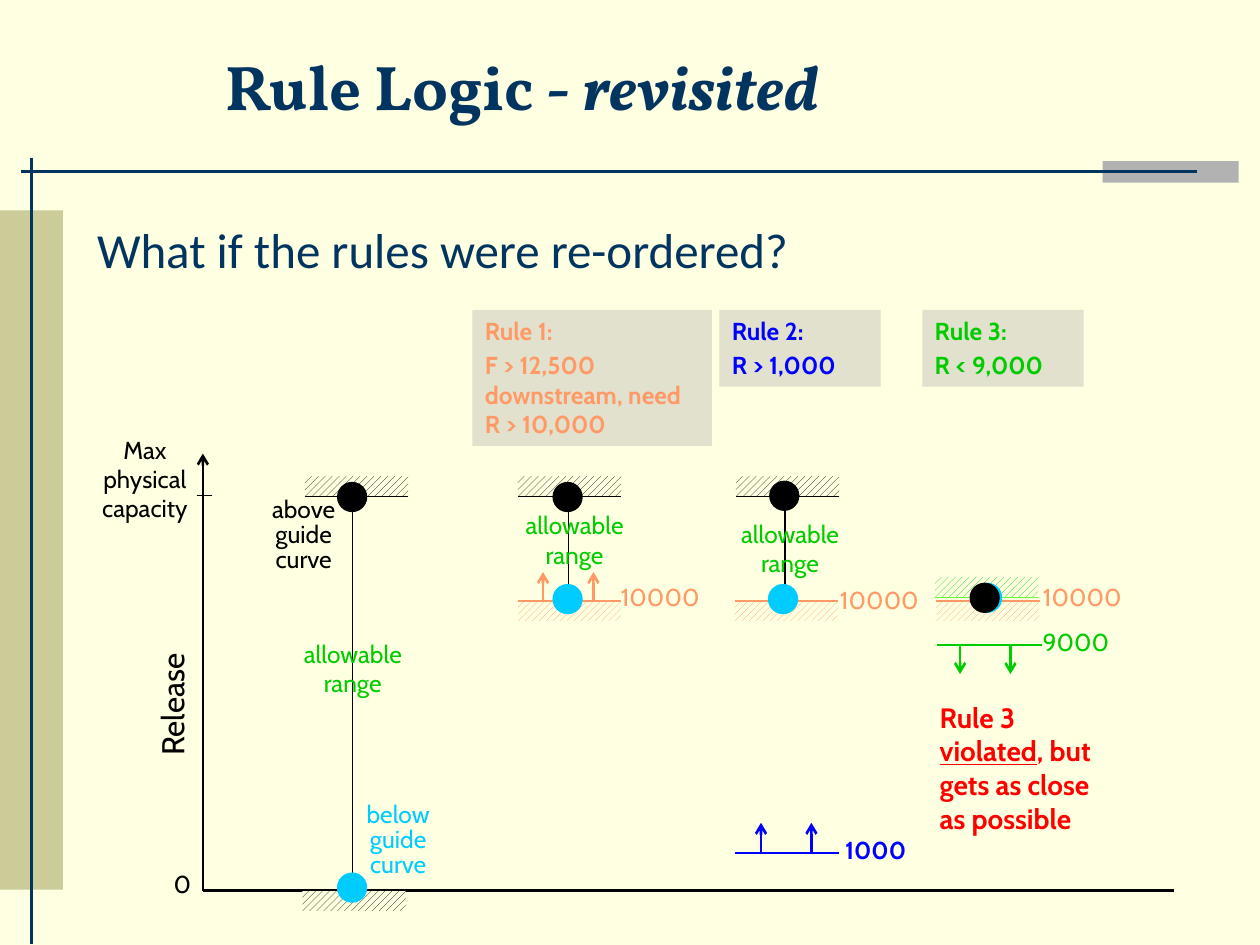
from dataclasses import dataclass

from lxml import etree
from pptx import Presentation
from pptx.dml.color import RGBColor
from pptx.enum.dml import MSO_PATTERN
from pptx.enum.shapes import MSO_CONNECTOR, MSO_SHAPE
from pptx.enum.text import MSO_ANCHOR, MSO_AUTO_SIZE, PP_ALIGN
from pptx.oxml.ns import qn
from pptx.util import Inches, Pt

RECTANGLE, OVAL = MSO_SHAPE.RECTANGLE, MSO_SHAPE.OVAL
STRAIGHT = MSO_CONNECTOR.STRAIGHT
DIAGONAL = MSO_PATTERN.WIDE_UPWARD_DIAGONAL
LEFT, CENTER = PP_ALIGN.LEFT, PP_ALIGN.CENTER
TOP, MIDDLE = MSO_ANCHOR.TOP, MSO_ANCHOR.MIDDLE
GROW, FIXED = MSO_AUTO_SIZE.SHAPE_TO_FIT_TEXT, MSO_AUTO_SIZE.NONE


@dataclass(frozen=True)
class Theme:
    paper: str = "FFFFE1"
    navy: str = "01345F"
    gray: str = "B2B2B2"
    khaki: str = "CCCC99"
    black: str = "000000"
    orange: str = "FF9966"
    green: str = "00CC00"
    lime: str = "66FF33"
    blue: str = "0000FF"
    cyan: str = "00CCFF"
    red: str = "FF0000"
    title_font: str = "Vollkorn"
    body_font: str = "Calibri"
    label_font: str = "Cabin"
    title_size: int = 36
    body_size: int = 28
    axis_size: int = 18
    verdict_size: int = 16
    label_size: int = 14
    thin: float = 0.75
    thick: float = 1.5


THEME = Theme()


@dataclass(frozen=True)
class Rule:
    left: float
    width: float
    height: float
    color: str
    heading: str
    condition: str


@dataclass(frozen=True)
class Limit:
    left: float
    level: float
    color: str
    line_color: str
    hatch_above: bool


@dataclass(frozen=True)
class Dot:
    x: float
    y: float
    color: str


@dataclass(frozen=True)
class Label:
    left: float
    top: float
    width: float
    height: float
    text: str
    color: str
    bold: bool = False
    spacing: float = 1.0


RULES = (
    Rule(3.75, 1.9, 1.08, THEME.orange, "Rule 1:", "F > 12,500 downstream, need R > 10,000"),
    Rule(7.32, 1.28, 0.61, THEME.green, "Rule 3:", "R < 9,000"),
    Rule(5.71, 1.28, 0.61, THEME.blue, "Rule 2:", "R > 1,000"),
)
LIMITS = (
    *(Limit(left, 3.94, THEME.black, THEME.black, True) for left in (2.42, 4.11, 5.84)),
    Limit(2.4, 7.07, THEME.black, THEME.black, False),
    *(Limit(left, 4.77, THEME.orange, THEME.orange, False) for left in (4.11, 5.83, 7.43)),
    Limit(7.42, 4.74, THEME.green, THEME.lime, True),
)
RANGES = ((2.8, 3.93, 7.05), (4.51, 3.86, 4.86), (6.23, 3.82, 4.83))
DOTS = (
    Dot(2.8, 3.95, THEME.black), Dot(2.8, 7.05, THEME.cyan),
    Dot(4.51, 4.76, THEME.cyan), Dot(4.51, 3.95, THEME.black),
    Dot(6.22, 4.76, THEME.cyan), Dot(6.23, 3.94, THEME.black),
    Dot(7.84, 4.75, THEME.cyan), Dot(7.82, 4.75, THEME.black),
)
ARROW_PAIRS = (
    (4.31, 4.78, -0.24, THEME.orange),
    (6.04, 6.77, -0.24, THEME.blue),
    (7.62, 5.11, 0.24, THEME.green),
)
BOUNDS = ((5.83, 6.77, THEME.blue), (7.44, 5.12, THEME.green))
LABELS = (
    Label(0.68, 3.4, 0.94, 0.8, "Max physical capacity", THEME.black),
    Label(1.28, 6.85, 0.29, 0.33, "0", THEME.black),
    Label(1.97, 3.91, 0.88, 0.69, "above guide curve", THEME.black, spacing=0.85),
    Label(2.72, 6.33, 0.88, 0.69, "below guide curve", THEME.cyan, spacing=0.85),
    *(Label(left, top, 1.18, 0.57, "allowable range", THEME.green)
      for left, top in ((2.21, 5.02), (3.97, 4), (5.68, 4.07))),
    *(Label(left, top, 0.94, 0.33, "10000", THEME.orange)
      for left, top in ((4.77, 4.57), (6.51, 4.59), (8.12, 4.57))),
    Label(6.48, 6.58, 0.94, 0.33, "1000", THEME.blue, bold=True),
    Label(8.07, 4.93, 0.94, 0.33, "9000", THEME.green),
)


def rgb(color: str) -> RGBColor:
    """Turn a hex colour into an RGBColor."""
    return RGBColor.from_string(color)


def write(paragraph, text: str, *, color: str, size: int = THEME.label_size,
          font: str = THEME.label_font, bold: bool = False, italic: bool = False,
          underline: bool = False, align=LEFT, spacing: float = 1.0, before: float = 0) -> None:
    """Add a formatted run to a paragraph."""
    paragraph.alignment = align
    paragraph.line_spacing = spacing
    paragraph.space_before = Pt(before)
    run = paragraph.add_run()
    run.text = text
    style = run.font
    style.name, style.size, style.color.rgb = font, Pt(size), rgb(color)
    style.bold, style.italic, style.underline = bold, italic, underline


def add_block(slide, kind, left: float, top: float, width: float, height: float,
              color: str, *, hatched: bool = False, outlined: bool = False):
    """Draw a preset shape with a plain or hatched fill."""
    block = slide.shapes.add_shape(kind, Inches(left), Inches(top), Inches(width), Inches(height))
    block.shadow.inherit = False
    if hatched:
        block.fill.patterned()
        block.fill.pattern = DIAGONAL
        block.fill.fore_color.rgb, block.fill.back_color.rgb = rgb(color), rgb(THEME.paper)
    else:
        block.fill.solid()
        block.fill.fore_color.rgb = rgb(color)
    if outlined:
        block.line.color.rgb, block.line.width = rgb(color), Pt(THEME.thin)
    else:
        block.line.fill.background()
    return block


def add_line(slide, x1: float, y1: float, x2: float, y2: float, color: str,
             width: float = THEME.thin, arrow: bool = False) -> None:
    """Draw a straight line, with an arrowhead at its end if asked."""
    line = slide.shapes.add_connector(STRAIGHT, Inches(x1), Inches(y1), Inches(x2), Inches(y2))
    line.line.color.rgb, line.line.width = rgb(color), Pt(width)
    if arrow:
        etree.SubElement(line.line._get_or_add_ln(), qn("a:tailEnd"), type="arrow")
    etree.SubElement(line._element.spPr, qn("a:effectLst"))


def add_text_box(slide, left: float, top: float, width: float, height: float):
    """Add an empty wrapping text box."""
    box = slide.shapes.add_textbox(Inches(left), Inches(top), Inches(width), Inches(height))
    box.text_frame.word_wrap = True
    box.text_frame.auto_size = GROW
    return box


def add_rule(slide, rule: Rule) -> None:
    """Draw a translucent panel stating one rule."""
    panel = add_block(slide, RECTANGLE, rule.left, 2.46, rule.width, rule.height, THEME.gray)
    tint = panel._element.spPr.find(qn("a:solidFill"))[0]
    etree.SubElement(tint, qn("a:alpha"), val="39000")
    frame = panel.text_frame
    frame.word_wrap, frame.auto_size, frame.vertical_anchor = True, GROW, TOP
    write(frame.paragraphs[0], rule.heading, color=rule.color, bold=True)
    write(frame.add_paragraph(), rule.condition, color=rule.color, bold=True, before=2.8)


def place(holder, left: float, top: float, width: float, height: float, anchor):
    """Move a placeholder and return its first paragraph."""
    holder.left, holder.top = Inches(left), Inches(top)
    holder.width, holder.height = Inches(width), Inches(height)
    frame = holder.text_frame
    frame.word_wrap, frame.auto_size, frame.vertical_anchor = True, FIXED, anchor
    return frame.paragraphs[0]


def add_frame(slide) -> None:
    """Draw the background, side band, crossing rules, title and question."""
    slide.background.fill.solid()
    slide.background.fill.fore_color.rgb = rgb(THEME.paper)
    add_block(slide, RECTANGLE, 8.75, 1.28, 1.08, 0.17, THEME.gray)
    add_line(slide, 0.17, 1.36, 9.5, 1.36, THEME.navy, THEME.thick)
    add_block(slide, RECTANGLE, 0, 1.67, 0.5, 5.39, THEME.khaki)
    add_line(slide, 0.25, 1.25, 0.25, 7.49, THEME.navy, THEME.thick)
    title = place(slide.shapes.title, 1.69, 0.08, 8.07, 1.19, MIDDLE)
    for text, italic in (("Rule Logic - ", False), ("revisited", True)):
        write(title, text, color=THEME.navy, size=THEME.title_size, font=THEME.title_font,
              bold=True, italic=italic)
    question = place(slide.placeholders[1], 0.67, 1.69, 9.08, 5.48, TOP)
    properties = question._p.get_or_add_pPr()
    properties.set("marL", str(Inches(0.38)))
    properties.set("indent", str(Inches(-0.38)))
    etree.SubElement(properties, qn("a:buNone"))
    write(question, "What if the rules were re-ordered?", color=THEME.navy,
          size=THEME.body_size, font=THEME.body_font)


def add_axes(slide) -> None:
    """Draw the release axis, its tick and the base line."""
    add_line(slide, 1.61, 7.07, 1.61, 3.6, THEME.black, THEME.thick, arrow=True)
    add_line(slide, 1.61, 7.07, 9.32, 7.07, THEME.black, THEME.thick)
    add_line(slide, 1.56, 3.93, 1.68, 3.93, THEME.black)
    release = add_text_box(slide, 0.6, 5.13, 1.53, 0.4)
    release.rotation = 270
    write(release.text_frame.paragraphs[0], "Release", color=THEME.black, size=THEME.axis_size)


def add_ranges(slide) -> None:
    """Draw limits, allowable ranges, bounds and guide curve dots."""
    for limit in LIMITS:
        top = limit.level - 0.16 if limit.hatch_above else limit.level
        add_block(slide, RECTANGLE, limit.left, top, 0.82, 0.16, limit.color, hatched=True)
        add_line(slide, limit.left, limit.level, limit.left + 0.82, limit.level, limit.line_color)
    for x, top, bottom in RANGES:
        add_line(slide, x, top, x, bottom, THEME.black)
    for left, level, color in BOUNDS:
        add_line(slide, left, level, left + 0.83, level, color, THEME.thick)
    for left, start, reach, color in ARROW_PAIRS:
        for x in (left, left + 0.4):
            add_line(slide, x, start, x, start + reach, color, THEME.thick, arrow=True)
    for dot in DOTS:
        add_block(slide, OVAL, dot.x - 0.12, dot.y - 0.12, 0.23, 0.23, dot.color, outlined=True)


def add_labels(slide) -> None:
    """Write the chart labels and the verdict on rule 3."""
    for label in LABELS:
        box = add_text_box(slide, label.left, label.top, label.width, label.height)
        write(box.text_frame.paragraphs[0], label.text, color=label.color, bold=label.bold,
              align=CENTER, spacing=label.spacing)
    verdict = add_text_box(slide, 7.36, 5.51, 1.41, 1.44).text_frame.paragraphs[0]
    for text in ("Rule 3 ", "violated", ", but gets as close as possible"):
        write(verdict, text, color=THEME.red, size=THEME.verdict_size, bold=True,
              underline=text == "violated")


def main() -> None:
    """Build and save the slide."""
    deck = Presentation()
    deck.slide_width, deck.slide_height = Inches(10), Inches(7.5)
    slide = deck.slides.add_slide(deck.slide_layouts[1])
    add_frame(slide)
    for rule in RULES:
        add_rule(slide, rule)
    add_axes(slide)
    add_ranges(slide)
    add_labels(slide)
    deck.save("out.pptx")


if __name__ == "__main__":
    main()
